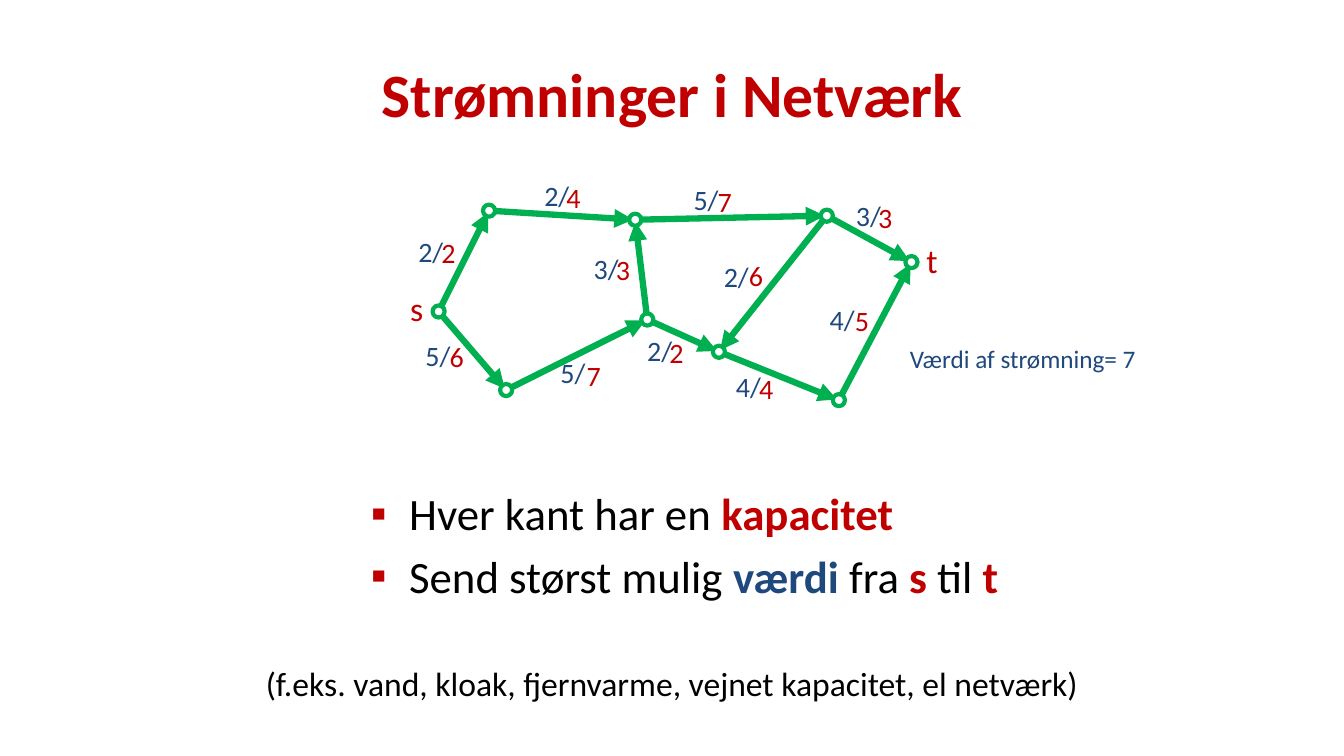
from math import hypot

from lxml import etree
from pptx import Presentation
from pptx.dml.color import RGBColor
from pptx.enum.shapes import MSO_CONNECTOR, MSO_SHAPE
from pptx.enum.text import MSO_ANCHOR, PP_ALIGN
from pptx.oxml.ns import qn
from pptx.util import Inches, Pt

STRAIGHT, OVAL = MSO_CONNECTOR.STRAIGHT, MSO_SHAPE.OVAL
LEFT, CENTER = PP_ALIGN.LEFT, PP_ALIGN.CENTER
MIDDLE = MSO_ANCHOR.MIDDLE

THEME = {
    "font": "Calibri",
    "red": RGBColor(0xC0, 0x00, 0x00),
    "blue": RGBColor(0x1F, 0x49, 0x7D),
    "green": RGBColor(0x00, 0xB0, 0x50),
    "black": RGBColor(0x00, 0x00, 0x00),
    "white": RGBColor(0xFF, 0xFF, 0xFF),
    "title": 44, "body": 32, "note": 24, "label": 20, "value": 18,
}


def add_run(p, text, size, color, bold=False):
    r = p.add_run()
    r.text = text
    formats = {"name": THEME["font"], "size": Pt(THEME[size]), "bold": bold}
    for name, value in formats.items():
        setattr(r.font, name, value)
    r.font.color.rgb = THEME[color]


def add_text(box, text, size, color, align=LEFT):
    tf = slide.shapes.add_textbox(*map(Inches, box)).text_frame
    tf.word_wrap = True
    p = tf.paragraphs[0]
    p.alignment = align
    add_run(p, text, size, color)
    return p


prs = Presentation()
prs.slide_width, prs.slide_height = Inches(13.33), Inches(7.5)
slide = prs.slides.add_slide(prs.slide_layouts[5])

# Title
title = slide.shapes.title
place = {"left": 0.67, "top": 0.3, "width": 12, "height": 1.25}
for name, value in place.items():
    setattr(title, name, Inches(value))
tf = title.text_frame
tf.vertical_anchor = MIDDLE
tf.paragraphs[0].alignment = CENTER
add_run(tf.paragraphs[0], "Strømninger i Netværk", "title", "red", True)

# Network: node centres, then edges as
# start, end, flow, flow corner, capacity, capacity corner
nodes = {
    "s": (4.35, 3.09), "a": (4.85, 2.09), "b": (5.02, 3.87),
    "c": (6.3, 2.18), "d": (6.42, 3.17), "e": (7.13, 3.49),
    "f": (8.2, 2.14), "g": (8.32, 3.97), "t": (9.04, 2.6),
}
edges = [
    ("b", "d", 5, (5.46, 3.48), 7, (5.72, 3.51)),
    ("s", "b", 5, (4.12, 3.31), 6, (4.36, 3.32)),
    ("s", "a", 2, (4.05, 2.28), 2, (4.28, 2.29)),
    ("a", "c", 2, (5.3, 1.72), 4, (5.52, 1.74)),
    ("d", "e", 2, (6.32, 3.26), 2, (6.54, 3.28)),
    ("d", "c", 3, (5.79, 2.45), 3, (6.01, 2.46)),
    ("c", "f", 5, (6.78, 1.76), 7, (7.02, 1.78)),
    ("f", "t", 3, (8.39, 1.92), 3, (8.61, 1.94)),
    ("f", "e", 2, (7.08, 2.53), 6, (7.33, 2.52)),
    ("e", "g", 4, (7.2, 3.62), 4, (7.43, 3.64)),
    ("g", "t", 4, (8.13, 2.95), 5, (8.38, 2.96)),
]
NODE_SIZE, TIP_GAP = 0.12, 0.02

# Flow labels
for _, _, flow, corner, _, _ in edges:
    add_text((*corner, 0.65, 0.44), f"{flow}/", "label", "blue")

# Bullets
bullets = [
    [("Hver kant har en ", "black"), ("kapacitet", "red")],
    [("Send størst mulig ", "black"), ("værdi ", "blue"), ("fra ", "black"),
     ("s", "red"), (" til ", "black"), ("t", "red")],
]
tf = slide.shapes.add_textbox(*map(Inches, (3.58, 4.77, 6.63, 1.31))).text_frame
tf.word_wrap = True
for i, runs in enumerate(bullets):
    p = tf.paragraphs[0] if i == 0 else tf.add_paragraph()
    p.space_before = Pt(0.2 * THEME["body"])
    pPr = p._p.get_or_add_pPr()
    pPr.set("marL", str(Inches(0.38)))
    pPr.set("indent", str(-Inches(0.38)))
    color = etree.SubElement(pPr, qn("a:buClr"))
    etree.SubElement(color, qn("a:srgbClr"), val=str(THEME["red"]))
    etree.SubElement(pPr, qn("a:buFont"), typeface="Arial")
    etree.SubElement(pPr, qn("a:buChar"), char="▪")
    for text, name in runs:
        add_run(p, text, "body", name, name != "black")

# Arrows
for start, end, *_ in edges:
    (x1, y1), (x2, y2) = nodes[start], nodes[end]
    length = hypot(x2 - x1, y2 - y1)
    tip_x = x2 - TIP_GAP * (x2 - x1) / length
    tip_y = y2 - TIP_GAP * (y2 - y1) / length
    line = slide.shapes.add_connector(
        STRAIGHT, *map(Inches, (x1, y1, tip_x, tip_y)))
    line.line.color.rgb = THEME["green"]
    line.line.width = Pt(4.5)
    ln = line.line._get_or_add_ln()
    etree.SubElement(ln, qn("a:tailEnd"), type="triangle")
    etree.SubElement(line._element.spPr, qn("a:effectLst"))

# Nodes
for x, y in nodes.values():
    sp = slide.shapes.add_shape(
        OVAL, Inches(x - NODE_SIZE / 2), Inches(y - NODE_SIZE / 2),
        Inches(NODE_SIZE), Inches(NODE_SIZE))
    sp.shadow.inherit = False
    sp.fill.solid()
    sp.fill.fore_color.rgb = THEME["white"]
    sp.line.color.rgb = THEME["green"]
    sp.line.width = Pt(3)

# Source, sink, capacities and flow value
add_text((3.97, 2.81, 0.34, 0.5), "s", "note", "red")
add_text((9.09, 2.33, 0.34, 0.5), "t", "note", "red")
for *_, capacity, corner in edges:
    add_text((*corner, 0.35, 0.44), str(capacity), "label", "red")
add_text((8.66, 3.36, 2.97, 0.4), "Værdi af strømning= 7", "value", "blue",
         CENTER)

# Examples
p = add_text((0, 6.53, 13.33, 0.92),
             "(f.eks. vand, kloak, fjernvarme, vejnet kapacitet, el netværk)",
             "note", "black", CENTER)
p.space_before = Pt(0.2 * THEME["note"])

prs.save("out.pptx")
